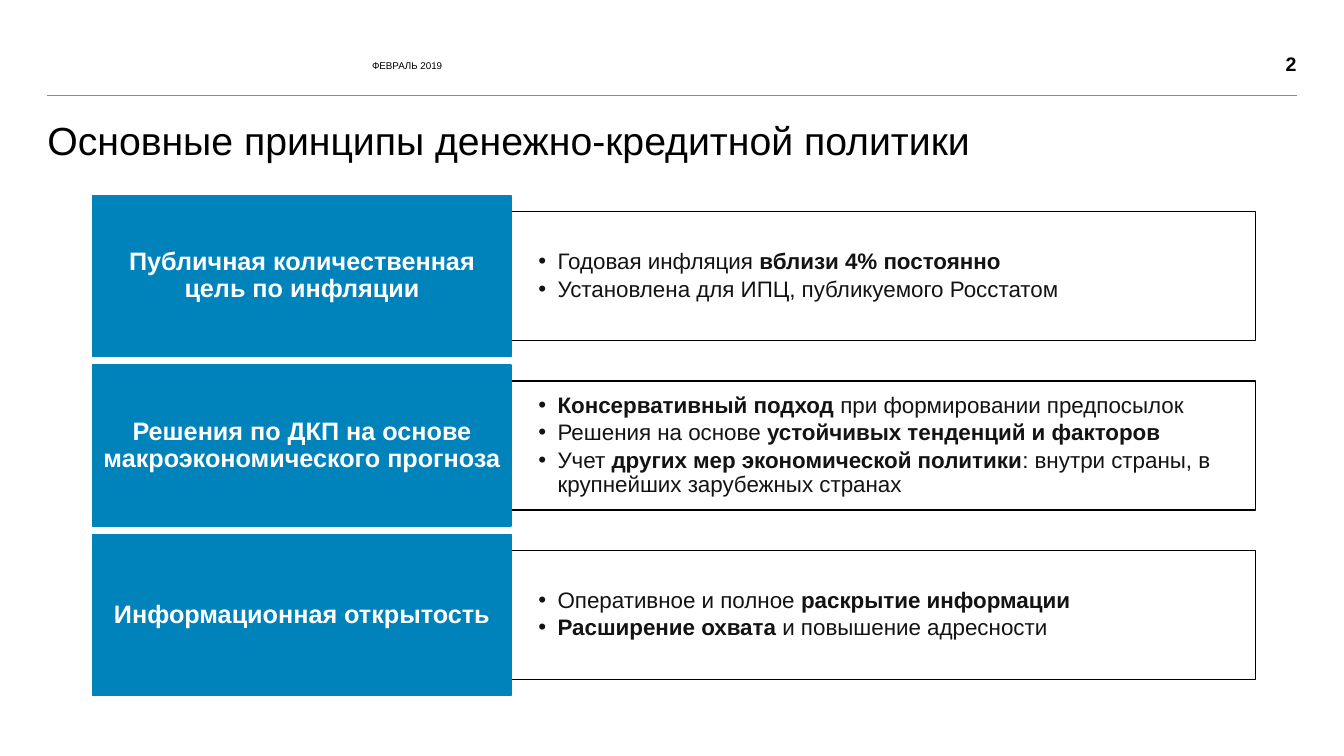
from lxml.etree import SubElement
from pptx import Presentation
from pptx.dml.color import RGBColor
from pptx.enum.shapes import MSO_CONNECTOR, MSO_SHAPE
from pptx.enum.text import MSO_ANCHOR, PP_ALIGN
from pptx.oxml.ns import qn
from pptx.util import Inches, Pt

TITLE = "Основные принципы денежно-кредитной политики"
DATE = "ФЕВРАЛЬ 2019"
PAGE = "2"
# Text between asterisks is bold.
ROWS = [
    ("Публичная количественная цель по инфляции", [
        "Годовая инфляция *вблизи 4% постоянно*",
        "Установлена для ИПЦ, публикуемого Росстатом",
    ]),
    ("Решения по ДКП на основе макроэкономического прогноза", [
        "*Консервативный подход* при формировании предпосылок",
        "Решения на основе *устойчивых тенденций и факторов*",
        "Учет *других мер экономической политики*: внутри страны, "
        "в крупнейших зарубежных странах",
    ]),
    ("Информационная открытость", [
        "Оперативное и полное *раскрытие информации*",
        "*Расширение охвата* и повышение адресности",
    ]),
]
COLORS = {"blue": "0082BB", "white": "FFFFFF", "black": "000000",
          "ink": "131314", "rule": "888A8D"}
FONT = "Arial"

WIDE, HIGH = 13.33, 7.5
EDGE, SPAN = 0.47, 12.39
LEFT, TOP = 0.92, 1.94
HEAD_W, HEAD_H = 4.15, 1.6
BODY_W, BODY_H = 7.38, 1.28
PITCH = 1.68


def color(name):
    return RGBColor.from_string(COLORS[name])


def style(font, size, name, bold=False):
    font.name, font.size, font.bold = FONT, Pt(size), bold
    font.color.rgb = color(name)


def setup(frame, anchor, side=0, edge=0):
    frame.word_wrap = True
    frame.vertical_anchor = anchor
    frame.margin_left = frame.margin_right = Inches(side)
    frame.margin_top = frame.margin_bottom = Inches(edge)


def label(slide, text, box, size, bold=False,
          align=PP_ALIGN.LEFT, anchor=MSO_ANCHOR.MIDDLE):
    frame = slide.shapes.add_textbox(*map(Inches, box)).text_frame
    setup(frame, anchor)
    frame.text = text
    para = frame.paragraphs[0]
    para.alignment, para.line_spacing = align, 0.9
    style(para.runs[0].font, size, "black", bold)


def block(slide, box, fill, line):
    shape = slide.shapes.add_shape(MSO_SHAPE.RECTANGLE, *map(Inches, box))
    shape.shadow.inherit = False
    shape.fill.solid()
    shape.fill.fore_color.rgb = color(fill)
    shape.line.color.rgb = color(line)
    shape.line.width = Pt(1)
    return shape.text_frame


def bullet(para, text):
    props = para._p.get_or_add_pPr()
    props.set("marL", str(Inches(0.19)))
    props.set("indent", str(-Inches(0.19)))
    SubElement(props, qn("a:buFont")).set("typeface", FONT)
    SubElement(props, qn("a:buChar")).set("char", "•")
    para.alignment, para.line_spacing = PP_ALIGN.LEFT, 0.9
    para.space_after = Pt(2.4)
    for i, part in enumerate(text.split("*")):
        if part:
            run = para.add_run()
            run.text = part
            style(run.font, 16, "ink", i % 2 == 1)


def row(slide, top, head, points):
    inset = (HEAD_H - BODY_H) / 2
    frame = block(slide, (LEFT + HEAD_W, top + inset, BODY_W, BODY_H),
                  "white", "black")
    setup(frame, MSO_ANCHOR.MIDDLE, 0.27, 0.14)
    for i, text in enumerate(points):
        bullet(frame.add_paragraph() if i else frame.paragraphs[0], text)

    frame = block(slide, (LEFT, top, HEAD_W, HEAD_H), "blue", "blue")
    setup(frame, MSO_ANCHOR.MIDDLE, 0.07, 0.04)
    frame.text = head
    para = frame.paragraphs[0]
    para.alignment, para.line_spacing = PP_ALIGN.CENTER, 0.9
    style(para.runs[0].font, 18, "white", True)


def main():
    deck = Presentation()
    deck.slide_width, deck.slide_height = Inches(WIDE), Inches(HIGH)
    slide = deck.slides.add_slide(deck.slide_layouts[6])

    rule = slide.shapes.add_connector(
        MSO_CONNECTOR.STRAIGHT,
        *map(Inches, (EDGE, 0.95, EDGE + SPAN, 0.95)))
    rule.line.color.rgb = color("rule")
    rule.line.width = Pt(0.5)
    SubElement(rule._element.spPr, qn("a:effectLst"))

    label(slide, PAGE, (12.05, 0.47, 0.81, 0.35), 14, True, PP_ALIGN.RIGHT)
    label(slide, TITLE, (EDGE, 1.21, SPAN, 0.66), 28, anchor=MSO_ANCHOR.TOP)
    label(slide, DATE, (3.69, 0.37, 3.9, 0.57), 7)
    for i, (head, points) in enumerate(ROWS):
        row(slide, TOP + i * PITCH, head, points)
    deck.save("out.pptx")


if __name__ == "__main__":
    main()
